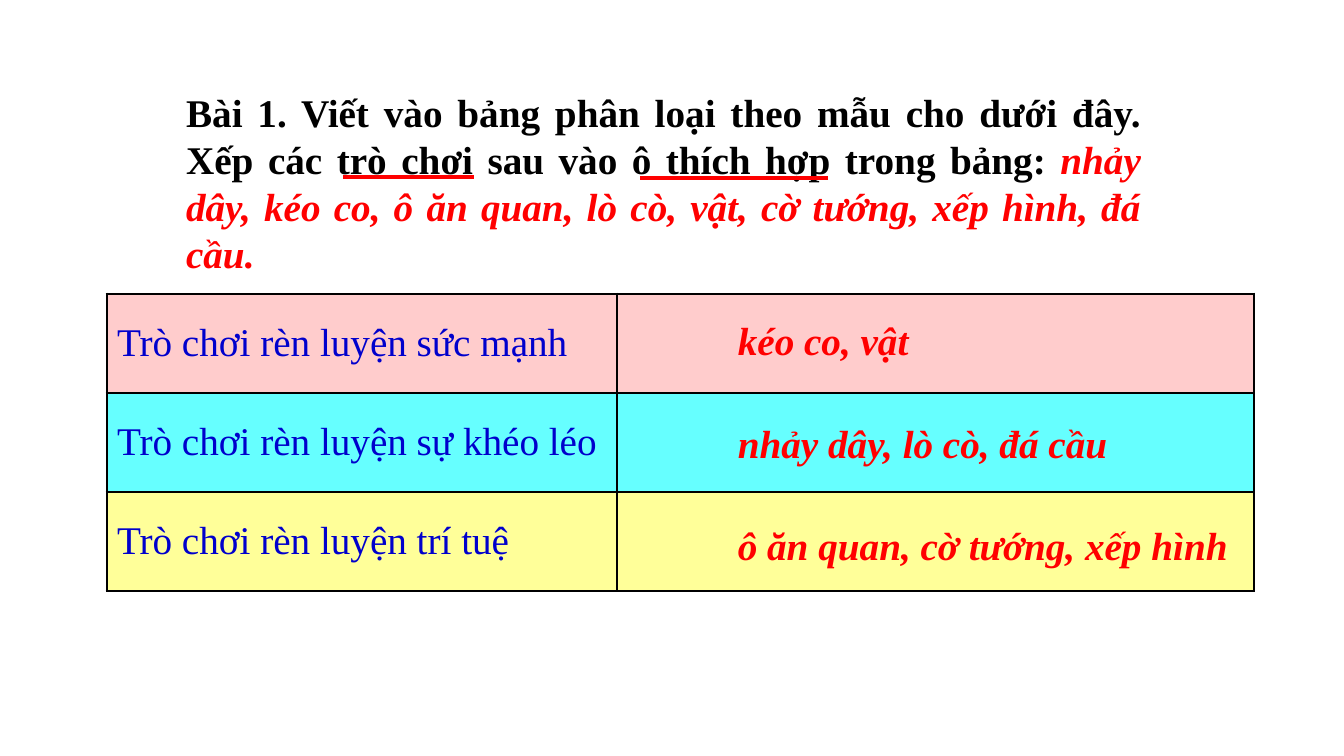
from lxml.etree import SubElement
from pptx import Presentation
from pptx.dml.color import RGBColor
from pptx.enum.shapes import MSO_CONNECTOR
from pptx.enum.text import MSO_ANCHOR, MSO_AUTO_SIZE, PP_ALIGN
from pptx.oxml.ns import qn
from pptx.util import Pt

# Content
TASK = [
    ("Bài 1. Viết vào bảng phân loại theo mẫu cho dưới đây. "
     "Xếp các trò chơi sau vào ô thích hợp trong bảng: ", "000000", False),
    ("nhảy dây, kéo co, ô ăn quan, lò cò, vật, cờ tướng, xếp hình, đá cầu.",
     "FF0000", True),
]
# Label, row fill, answer, answer top
GAMES = [
    ("Trò chơi rèn luyện sức mạnh", "FFCCCC", "kéo co, vật", 311),
    ("Trò chơi rèn luyện sự khéo léo", "66FFFF", "nhảy dây, lò cò, đá cầu", 414),
    ("Trò chơi rèn luyện trí tuệ", "FFFF99", "ô ăn quan, cờ tướng, xếp hình", 516),
]
# Left, right, height of each underline
RULES = [(343, 474, 177), (640, 828, 178)]
COLS = [510, 637]
ROW = 99
FACE = "Times New Roman"


def px(n):
    return round(n * 914400 / 100.8)


def box(*sides):
    return [px(n) for n in sides]


def tint(code):
    return RGBColor.from_string(code)


def style(font, color=None, bold=False, italic=False):
    font.name, font.size = FACE, Pt(28)
    font.bold, font.italic = bold, italic
    if color:
        font.color.rgb = tint(color)


def edge(cell, side, width):
    line = SubElement(cell._tc.get_or_add_tcPr(), qn("a:ln" + side), w=str(Pt(width)))
    fill = SubElement(line, qn("a:solidFill"))
    SubElement(fill, qn("a:srgbClr"), val="000000")


def add_task(slide):
    title = slide.shapes.title
    title.left, title.top, title.width, title.height = box(176, 83, 975, 201)
    frame = title.text_frame
    frame.word_wrap = True
    frame.auto_size = MSO_AUTO_SIZE.NONE
    frame.vertical_anchor = MSO_ANCHOR.TOP
    para = frame.paragraphs[0]
    para.alignment = PP_ALIGN.JUSTIFY
    style(para.font, bold=True)
    for text, color, italic in TASK:
        run = para.add_run()
        run.text = text
        style(run.font, color, True, italic)


def add_rules(slide):
    for left, right, y in RULES:
        rule = slide.shapes.add_connector(MSO_CONNECTOR.STRAIGHT, *box(left, y, right, y))
        rule.line.color.rgb = tint("FF0000")
        rule.line.width = Pt(2.25)
        SubElement(rule._element.spPr, qn("a:effectLst"))


def add_grid(slide):
    rows, cols = len(GAMES), len(COLS)
    grid = slide.shapes.add_table(rows, cols, *box(107, 294, sum(COLS), ROW * rows)).table
    for col, width in zip(grid.columns, COLS):
        col.width = px(width)
    for r, (label, color, _, _) in enumerate(GAMES):
        grid.rows[r].height = px(ROW)
        for c in range(cols):
            cell = grid.cell(r, c)
            # Thick frame outside, thin lines inside
            outer = {"L": c == 0, "R": c == cols - 1, "T": r == 0, "B": r == rows - 1}
            for side, thick in outer.items():
                edge(cell, side, 2.25 if thick else 1)
            cell.fill.solid()
            cell.fill.fore_color.rgb = tint(color)
            cell.vertical_anchor = MSO_ANCHOR.MIDDLE
        cell = grid.cell(r, 0)
        cell.text = label
        para = cell.text_frame.paragraphs[0]
        para.alignment = PP_ALIGN.JUSTIFY
        style(para.font, "0000CC")


def add_answers(slide):
    for _, _, answer, top in GAMES:
        frame = slide.shapes.add_textbox(*box(728, top, 526, 57)).text_frame
        frame.word_wrap = True
        frame.text = answer
        style(frame.paragraphs[0].font, "FF0000", True, True)


def main():
    deck = Presentation()
    deck.slide_width, deck.slide_height = box(1344, 756)
    slide = deck.slides.add_slide(deck.slide_layouts[5])
    add_task(slide)
    add_rules(slide)
    add_grid(slide)
    add_answers(slide)
    deck.save("out.pptx")


if __name__ == "__main__":
    main()
